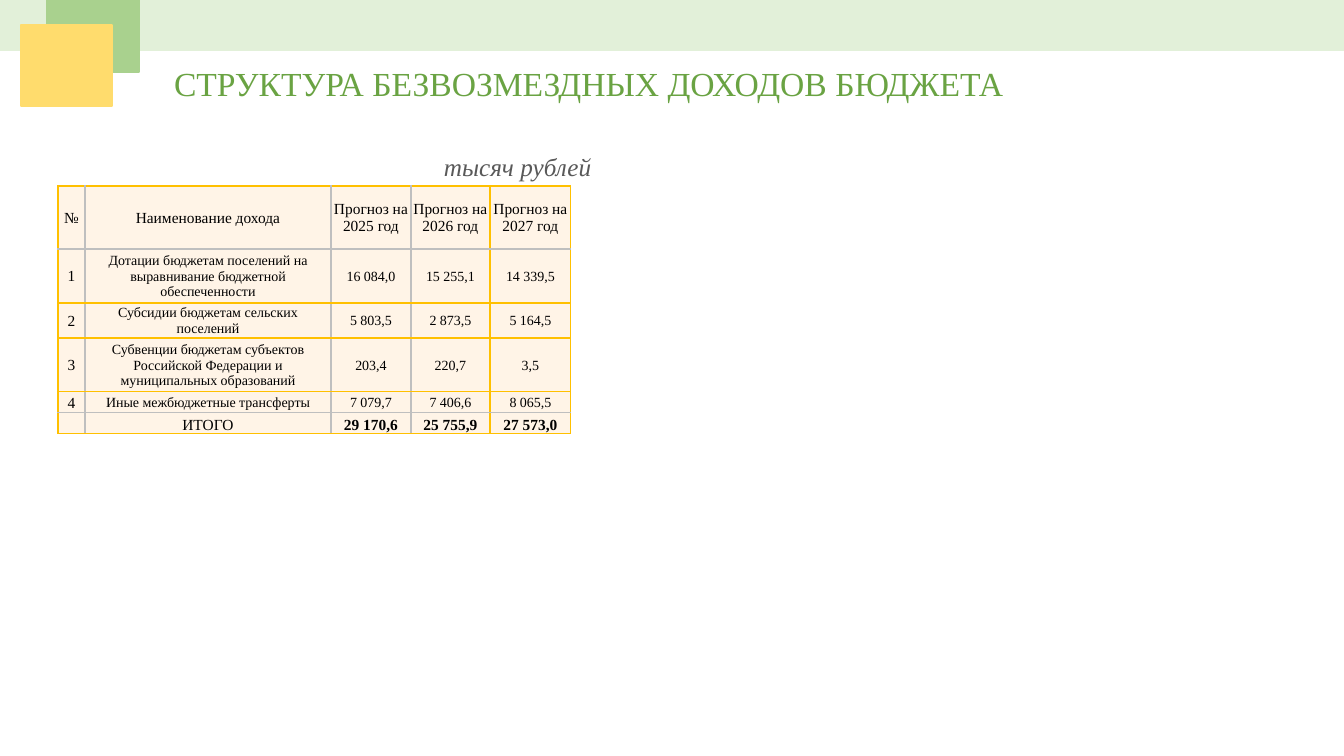
from lxml import etree
from pptx import Presentation
from pptx.dml.color import RGBColor
from pptx.enum.shapes import MSO_SHAPE
from pptx.enum.text import MSO_ANCHOR, PP_ALIGN
from pptx.oxml.ns import qn
from pptx.util import Pt

RECT = MSO_SHAPE.RECTANGLE
TOP, MIDDLE, BOTTOM = MSO_ANCHOR.TOP, MSO_ANCHOR.MIDDLE, MSO_ANCHOR.BOTTOM
LEFT, CENTER = PP_ALIGN.LEFT, PP_ALIGN.CENTER
TITLE_ONLY = 5

GOLD, GREY, CREAM = "FFC000", "BFBFBF", "FFF4E7"
COLS = [27, 246, 80, 79, 81]
ROWS = [63, 54, 35, 54, 21, 21]
GOLD_X = {0, 4, 5}
GOLD_Y = {0, 2, 3, 4, 6}
INCOME = [
    ["№", "Наименование дохода", "Прогноз на 2025 год", "Прогноз на 2026 год",
     "Прогноз на 2027 год"],
    ["1", "Дотации бюджетам поселений на выравнивание бюджетной обеспеченности",
     "16 084,0", "15 255,1", "14 339,5"],
    ["2", "Субсидии бюджетам сельских поселений", "5 803,5", "2 873,5", "5 164,5"],
    ["3", "Субвенции бюджетам субъектов Российской Федерации и "
     "муниципальных образований", "203,4", "220,7", "3,5"],
    ["4", "Иные межбюджетные трансферты", "7 079,7", "7 406,6", "8 065,5"],
    ["", "ИТОГО", "29 170,6", "25 755,9", "27 573,0"],
]


def px(n):
    return round(n * 914400 / 100.8)


def rgb(color):
    return RGBColor.from_string(color)


class Deck:
    font = "Times New Roman"

    def __init__(self):
        self.file = Presentation()
        self.file.slide_width, self.file.slide_height = px(1344), px(756)
        self.slide = self.file.slides.add_slide(self.file.slide_layouts[TITLE_ONLY])

    def words(self, frame, text, size, color, align=LEFT, bold=False, italic=False):
        frame.text = text
        par = frame.paragraphs[0]
        par.alignment = align
        for run in par.runs:
            font = run.font
            font.name, font.size = self.font, Pt(size)
            font.bold, font.italic = bold, italic
            font.color.rgb = rgb(color)

    def title(self, x, y, w, h, text, size, color):
        shape = self.slide.shapes.title
        shape.left, shape.top, shape.width, shape.height = map(px, (x, y, w, h))
        frame = shape.text_frame
        frame.word_wrap, frame.vertical_anchor = True, TOP
        self.words(frame, text, size, color)

    def label(self, x, y, w, h, text, size, color):
        box = self.slide.shapes.add_textbox(*map(px, (x, y, w, h)))
        box.text_frame.word_wrap = False
        self.words(box.text_frame, text, size, color, italic=True)

    def block(self, x, y, w, h, color):
        shape = self.slide.shapes.add_shape(RECT, *map(px, (x, y, w, h)))
        shape.shadow.inherit = False
        shape.fill.solid()
        shape.fill.fore_color.rgb = rgb(color)
        shape.line.color.rgb = rgb(color)
        shape.line.width = Pt(1)

    def edge(self, cell, side, color):
        props = cell._tc.get_or_add_tcPr()
        line = etree.SubElement(props, qn("a:ln" + side), w=str(Pt(1)))
        fill = etree.SubElement(line, qn("a:solidFill"))
        etree.SubElement(fill, qn("a:srgbClr"), val=color)

    def cell(self, cell, row, col, text):
        last = row == len(ROWS) - 1
        # Borders
        for side, at, golds in (("L", col, GOLD_X), ("R", col + 1, GOLD_X),
                                ("T", row, GOLD_Y), ("B", row + 1, GOLD_Y)):
            self.edge(cell, side, GOLD if at in golds else GREY)
        cell.fill.solid()
        cell.fill.fore_color.rgb = rgb(CREAM)
        # Text
        cell.margin_left = cell.margin_right = cell.margin_top = px(1)
        cell.margin_bottom = 0
        cell.vertical_anchor = BOTTOM if last else MIDDLE
        size = 11 if row == 0 or col == 0 or last else 10
        self.words(cell.text_frame, text, size, "000000", CENTER, last and col > 1)
        if not text:
            par = cell.text_frame.paragraphs[0]._p
            etree.SubElement(par, qn("a:endParaRPr"), sz=str(size * 100))

    def table(self, x, y, data):
        frame = self.slide.shapes.add_table(
            len(ROWS), len(COLS), px(x), px(y), px(sum(COLS)), px(sum(ROWS)))
        grid = frame.table
        grid.first_row = grid.horz_banding = False
        for col, width in zip(grid.columns, COLS):
            col.width = px(width)
        for row, height in zip(grid.rows, ROWS):
            row.height = px(height)
        for r, line in enumerate(data):
            for c, text in enumerate(line):
                self.cell(grid.cell(r, c), r, c, text)


def main():
    deck = Deck()
    # Heading
    deck.title(164, 58, 864, 50, "СТРУКТУРА БЕЗВОЗМЕЗДНЫХ ДОХОДОВ БЮДЖЕТА", 24, "6AA343")
    # Top band and corner squares
    deck.block(0, 0, 1344, 50, "E2F0D9")
    deck.block(47, 0, 92, 72, "A9D18E")
    deck.block(21, 25, 91, 81, "FFDC6D")
    # Income table with its unit
    deck.label(434, 146, 169, 40, "тысяч рублей", 18, "595959")
    deck.table(58, 186, INCOME)
    deck.file.save("out.pptx")


if __name__ == "__main__":
    main()
